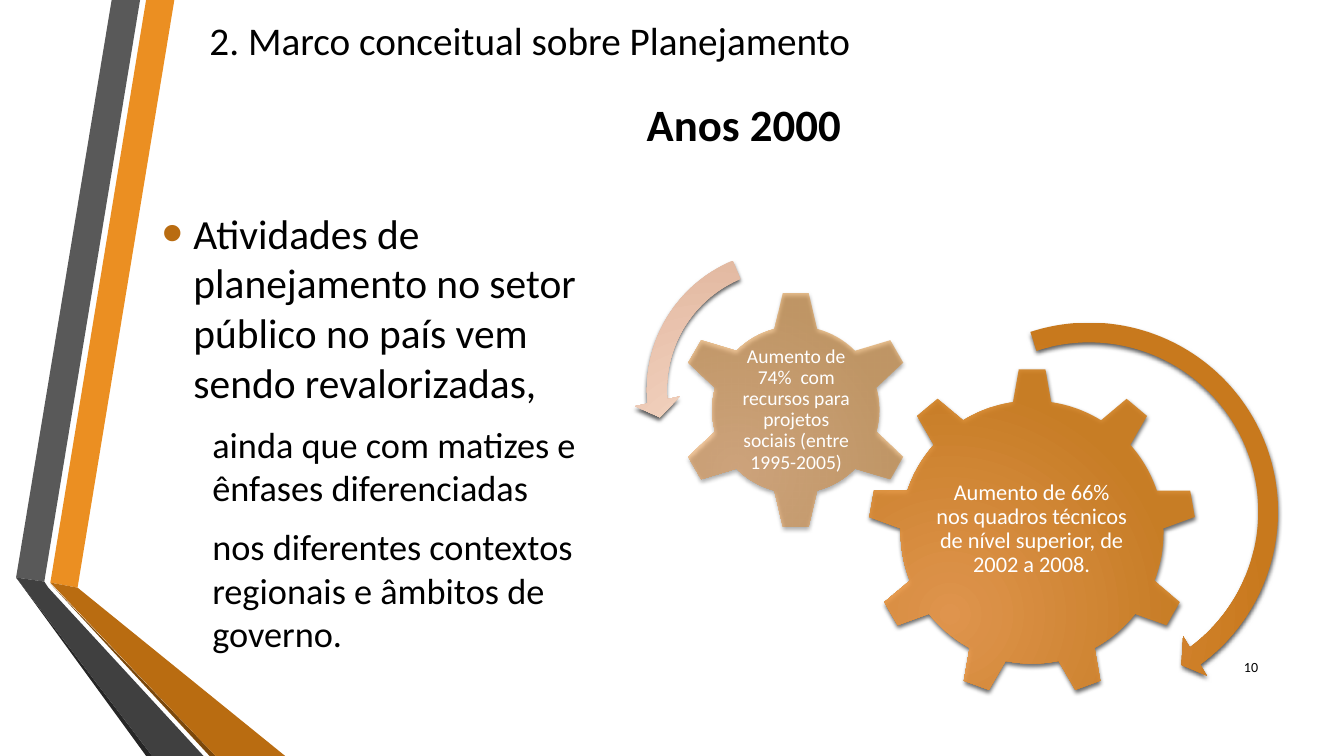
"""Build the slide on planning in the 2000s, with ribbons, text and two gears."""
from lxml.etree import SubElement
from pptx import Presentation
from pptx.dml.color import RGBColor
from pptx.enum.shapes import MSO_SHAPE as Preset
from pptx.enum.text import MSO_ANCHOR as Anchor, PP_ALIGN as Align
from pptx.oxml.ns import qn
from pptx.util import Pt

COLUMNS, ROWS = 160, 90
CELL = 76200
FONT = "Calibri"
BLACK, WHITE, BROWN = "000000", "FFFFFF", "B96C11"
color = RGBColor.from_string


def cells(*counts):
    """Turn counts of grid cells into slide lengths."""
    return [round(count * CELL) for count in counts]


def add_text(box, lines, align=Align.LEFT, hue=BLACK, bold=False, inset=None, spacing=None):
    """Add a text box from lines of wording and size; return its paragraphs."""
    frame = slide.shapes.add_textbox(*cells(*box)).text_frame
    frame.word_wrap = True
    frame.vertical_anchor = Anchor.MIDDLE
    if inset is not None:
        frame.margin_left = frame.margin_right = inset
        frame.margin_top = frame.margin_bottom = inset
    for index, (wording, size) in enumerate(lines):
        paragraph = frame.add_paragraph() if index else frame.paragraphs[0]
        paragraph.alignment = align
        paragraph.line_spacing = spacing
        run = paragraph.add_run()
        run.text = wording
        run.font.name = FONT
        run.font.size = Pt(size)
        run.font.bold = bold
        run.font.color.rgb = color(hue)
    return frame.paragraphs


presentation = Presentation()
presentation.slide_width, presentation.slide_height = cells(COLUMNS, ROWS)
slide = presentation.slides.add_slide(presentation.slide_layouts[6])

ribbons = [
    ("EB8F22", [(6, 69.36), (9.24, 69.96), (20.76, 0), (17.4, 0)]),
    ("595959", [(16.68, 0), (13.3, 0), (1.92, 68.76), (5.28, 69.24)]),
    ("262626", [(1.92, 68.76), (17.4, ROWS), (18.12, ROWS)]),
    ("7B480B", [(6, 69.48), (24.96, ROWS), (25.68, ROWS)]),
    (BROWN, [(6, 69.36), (25.68, ROWS), (33.96, ROWS), (9.24, 69.96)]),
    ("404040", [(24.24, ROWS), (5.76, 69.96), (5.28, 69.24), (1.92, 68.76), (18.12, ROWS)]),
]
for hue, corners in ribbons:
    start, *others = [cells(*corner) for corner in corners]
    builder = slide.shapes.build_freeform(*start)
    builder.add_line_segments(others)
    ribbon = builder.convert_to_shape()
    ribbon.shadow.inherit = False
    ribbon.fill.solid()
    ribbon.fill.fore_color.rgb = color(hue)
    ribbon.line.fill.background()

body = add_text((18.1, 21.84, 53.8, 59.04), [
    ("Atividades de planejamento no setor público no país vem sendo revalorizadas,", 29.6),
    ("ainda que com matizes e ênfases diferenciadas", 25.9),
    ("nos diferentes contextos regionais e âmbitos de governo.", 25.9),
])
for paragraph, margin, hanging, before in zip(body, (3.75, 6, 6), (-3.75, 0, 0), (6, 5, 5)):
    paragraph.space_before = Pt(before)
    paragraph.space_after = Pt(6)
    properties = paragraph._p.get_or_add_pPr()
    for name, length in zip(("marL", "indent"), cells(margin, hanging)):
        properties.set(name, str(length))
properties = body[0]._p.get_or_add_pPr()
bullet_color = SubElement(properties, qn("a:buClr"))
SubElement(bullet_color, qn("a:srgbClr"), val=BROWN)
SubElement(properties, qn("a:buSzPct"), val="145000")
SubElement(properties, qn("a:buFont"), typeface="Arial")
SubElement(properties, qn("a:buChar"), char="•")

add_text((23.76, -0.84, 83.04, 11.28), [("2. Marco conceitual sobre Planejamento", 28)])
add_text((48.6, 9.12, 79.92, 11.28), [("Anos 2000", 32)], Align.CENTER, bold=True)

gear_parts = [
    (Preset.GEAR_9, 103.32, 43.8, 39.12, ("EC994A", "D17F1E"), 90, []),
    (Preset.GEAR_6, 80.52, 34.56, 28.44, ("EC994A", "D17F1E"), 50, []),
    (Preset.CIRCULAR_ARROW, 105.6, 36.84, 48.12, ("E39349", "C8791D"), 100,
     [0.049, 3.126, 32.244, 151.137, 0.057]),
    (Preset.LEFT_CIRCULAR_ARROW, 75.48, 28.2, 36.36, ("F7D9C8", "E2B8A0"), 100,
     [0.065, 4.3, 104.891, 148.378, 0.075]),
]
for preset, left, top, size, hues, opacity, adjustments in gear_parts:
    shape = slide.shapes.add_shape(preset, *cells(left, top, size, size))
    for index, value in enumerate(adjustments):
        shape.adjustments[index] = value
    shape.line.fill.background()
    shape.fill.gradient()
    gradient = shape._element.spPr.find(qn("a:gradFill"))
    for child in list(gradient):
        gradient.remove(child)
    stops = SubElement(gradient, qn("a:gsLst"))
    for position, hue in zip(("0", "100000"), hues):
        stop = SubElement(stops, qn("a:gs"), pos=position)
        stop_color = SubElement(stop, qn("a:srgbClr"), val=hue)
        SubElement(stop_color, qn("a:alpha"), val=str(opacity * 1000))
    circle = SubElement(gradient, qn("a:path"), {"path": "circle"})
    SubElement(circle, qn("a:fillToRect"), l="50000", t="100000", r="100000", b="50000")
    shape.shadow.inherit = False
    effects = shape._element.spPr.find(qn("a:effectLst"))
    shadow = SubElement(effects, qn("a:outerShdw"), blurRad=str(Pt(3)), dist=str(Pt(2)),
                        dir="5400000", rotWithShape="0")
    shadow_color = SubElement(shadow, qn("a:srgbClr"), val=BLACK)
    SubElement(shadow_color, qn("a:alpha"), val="64000")

gear_labels = [
    ((111.12, 52.92, 23.4, 20.16), 16,
     "Aumento de 66% nos quadros técnicos de nível superior, de 2002 a 2008."),
    ((87.72, 41.76, 14.16, 14.04), 14,
     "Aumento de 74%  com recursos para projetos sociais (entre 1995-2005)"),
]
for box, size, wording in gear_labels:
    label = add_text(box, [(wording, size)], Align.CENTER, WHITE, inset=Pt(1.5), spacing=0.9)
    label[0].space_after = Pt(0.35 * size)

add_text((143.76, 77.04, 7.2, 4.8), [("10", 10)], Align.RIGHT)

presentation.save("out.pptx")
